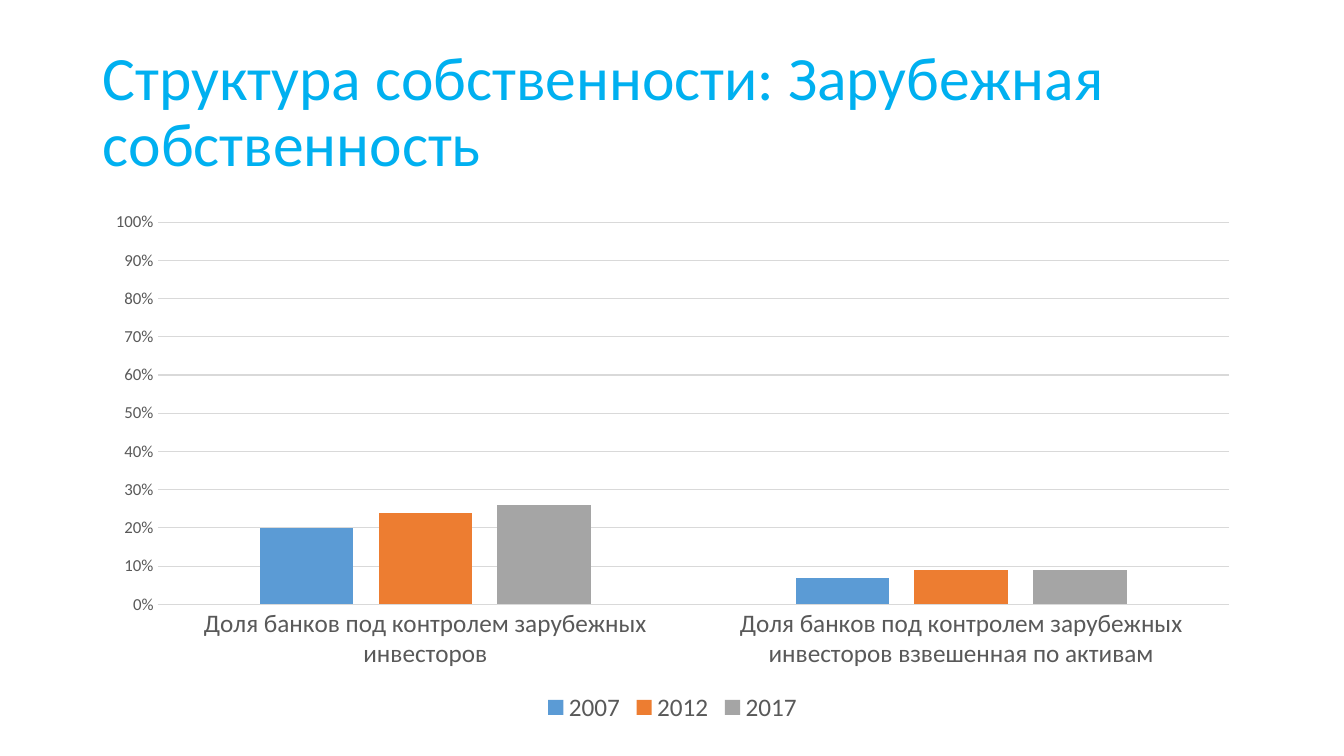
from pptx import Presentation
from pptx import util as u
from pptx.chart import data as cd
from pptx.dml.color import RGBColor
from pptx.enum import chart as ch, text as tx

FONT = "Calibri"
HUES = {
    "title": "00B0F0",
    "label": "595959",
    "grid": "D9D9D9",
    "2007": "5B9BD5",
    "2012": "ED7D31",
    "2017": "A5A5A5",
}
CATS = [
    "Доля банков под контролем зарубежных инвесторов",
    "Доля банков под контролем зарубежных инвесторов взвешенная по активам",
]
SHARES = {"2007": (0.2, 0.07), "2012": (0.24, 0.09), "2017": (0.26, 0.09)}


def hue(key):
    return RGBColor.from_string(HUES[key])


def style(font, size, color):
    font.name = FONT
    font.size = u.Pt(size)
    font.color.rgb = hue(color)


def rule(line):
    line.color.rgb = hue("grid")
    line.width = u.Pt(0.75)


def write(slide, box, words, size=18, color="label", space=1.0):
    frame = slide.shapes.add_textbox(*map(u.Inches, box)).text_frame
    frame.word_wrap = True
    frame.vertical_anchor = tx.MSO_ANCHOR.MIDDLE
    par = frame.paragraphs[0]
    par.line_spacing = space
    run = par.add_run()
    run.text = words
    style(run.font, size, color)


def plot_shares(slide, box):
    data = cd.CategoryChartData(number_format="0%")
    data.categories = CATS
    for year, vals in SHARES.items():
        data.add_series(year, vals)
    chart = slide.shapes.add_chart(
        ch.XL_CHART_TYPE.COLUMN_CLUSTERED, *map(u.Inches, box), data
    ).chart
    chart.has_title = False
    style(chart.font, 10, "label")

    # Bars
    plot = chart.plots[0]
    plot.vary_by_categories = False
    plot.gap_width = 219
    plot.overlap = -27
    for bars in plot.series:
        bars.format.fill.solid()
        bars.format.fill.fore_color.rgb = hue(bars.name)

    # Axes
    cat, val = chart.category_axis, chart.value_axis
    for axis, size in ((cat, 18), (val, 12)):
        axis.major_tick_mark = axis.minor_tick_mark = ch.XL_TICK_MARK.NONE
        style(axis.tick_labels.font, size, "label")
    rule(cat.format.line)
    val.format.line.fill.background()
    val.minimum_scale, val.maximum_scale, val.major_unit = 0, 1, 0.1
    val.tick_labels.number_format = "0%"
    val.tick_labels.number_format_is_linked = False
    val.has_major_gridlines = True
    rule(val.major_gridlines.format.line)

    # Legend
    chart.has_legend = True
    chart.legend.position = ch.XL_LEGEND_POSITION.BOTTOM
    chart.legend.include_in_layout = False
    style(chart.legend.font, 18, "label")


def main():
    deck = Presentation()
    deck.slide_width, deck.slide_height = u.Inches(13.33), u.Inches(7.5)
    slide = deck.slides.add_slide(deck.slide_layouts[6])
    left, width = 0.92, 11.5
    write(slide, (left, 0.4, width, 1.45),
          "Структура собственности: Зарубежная собственность",
          size=44, color="title", space=0.9)
    plot_shares(slide, (left, 2, width, 5.22))
    deck.save("out.pptx")


if __name__ == "__main__":
    main()
